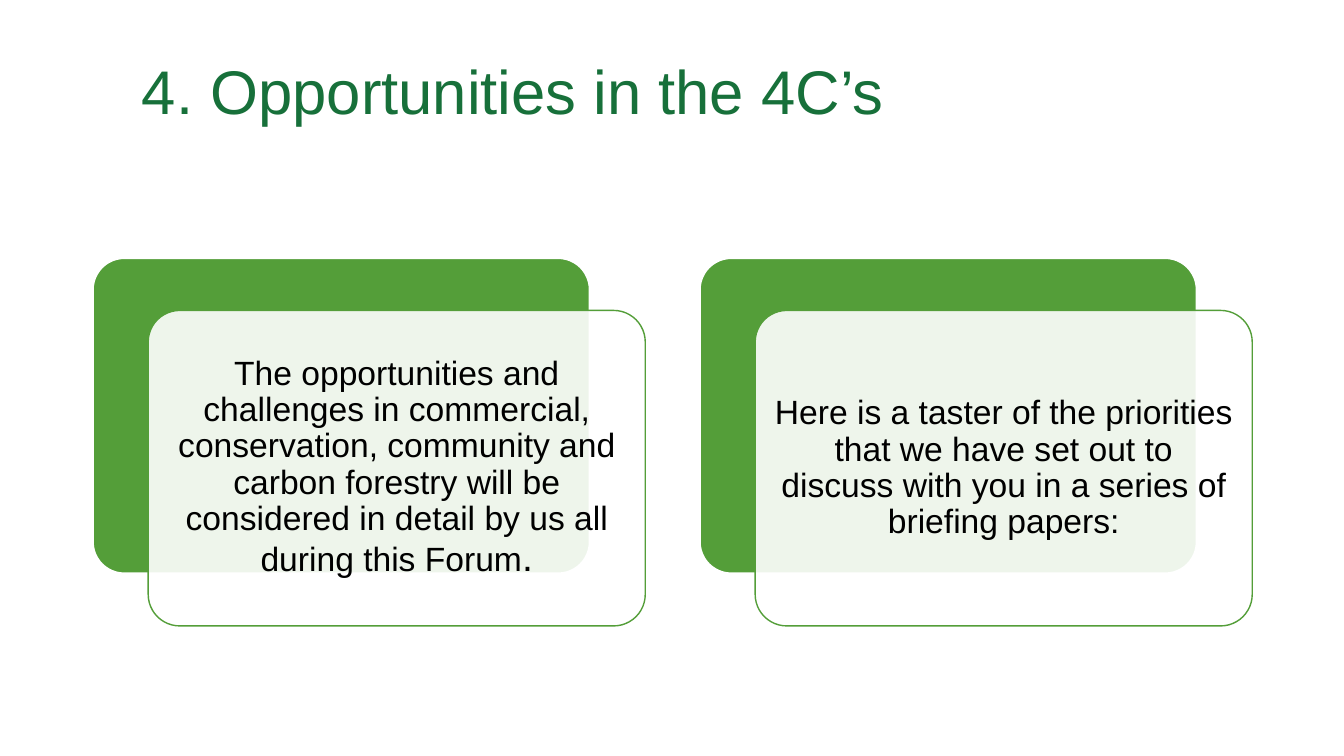
from lxml import etree
from pptx import Presentation
from pptx.dml.color import RGBColor as RGB
from pptx.enum.shapes import MSO_SHAPE as Shape
from pptx.enum.text import MSO_ANCHOR as Anchor, PP_ALIGN as Align
from pptx.oxml.ns import qn
from pptx.util import Inches, Pt

FONT = "Arial"
HEX = {"title": "17703A", "green": "549E39", "white": "FFFFFF", "black": "000000"}
CARDS = [
    [("The opportunities and challenges in commercial, conservation, community and "
      "carbon forestry will be considered in detail by us all during this Forum", 24),
     (".", 28)],
    [("Here is a taster of the priorities that we have set out to discuss with you "
      "in a series of briefing papers:", 24)],
]


def add_text(slide, box, runs, color="black", align=Align.LEFT, pad=0.1):
    """Add one middle-anchored paragraph made of (text, size) runs."""
    frame = slide.shapes.add_textbox(*map(Inches, box)).text_frame
    frame.word_wrap = True
    frame.vertical_anchor = Anchor.MIDDLE
    frame.margin_left = frame.margin_right = Inches(0.1)
    frame.margin_top = frame.margin_bottom = Inches(pad)
    para = frame.paragraphs[0]
    para.alignment = align
    para.line_spacing = 0.9
    for text, size in runs:
        run = para.add_run()
        run.text = text
        run.font.name = FONT
        run.font.size = Pt(size)
        run.font.color.rgb = RGB.from_string(HEX[color])


def add_panel(slide, box, fill, line, width, alpha=None):
    """Add a rounded panel; alpha is its opacity in percent."""
    panel = slide.shapes.add_shape(Shape.ROUNDED_RECTANGLE, *map(Inches, box))
    panel.adjustments[0] = 0.1
    panel.shadow.inherit = False
    panel.fill.solid()
    panel.fill.fore_color.rgb = RGB.from_string(HEX[fill])
    panel.line.color.rgb = RGB.from_string(HEX[line])
    panel.line.width = Pt(width)
    if alpha is not None:
        color = panel.fill._xPr.find(qn("a:solidFill"))[0]
        etree.SubElement(color, qn("a:alpha")).set("val", str(alpha * 1000))


def add_card(slide, box, runs):
    """Add a green panel with a translucent text panel offset over it."""
    left, top, width, height = box
    x, y, inset = left + 0.55, top + 0.52, 0.09
    add_panel(slide, box, "green", "white", 1.5)
    add_panel(slide, (x, y, width, height), "white", "green", 1, alpha=90)
    inner = (x + inset, y + inset, width - 2 * inset, height - 2 * inset)
    add_text(slide, inner, runs, align=Align.CENTER)


def main():
    deck = Presentation()
    deck.slide_width, deck.slide_height = Inches(13.33), Inches(7.5)
    slide = deck.slides.add_slide(deck.slide_layouts[6])
    add_text(slide, (1.31, 0.21, 10.58, 1.45), [("4. Opportunities in the 4C’s", 44)],
             color="title", pad=0.05)
    for i, runs in enumerate(CARDS):
        add_card(slide, (0.92 + 6.02 * i, 2.56, 4.93, 3.13), runs)
    deck.save("out.pptx")


if __name__ == "__main__":
    main()
